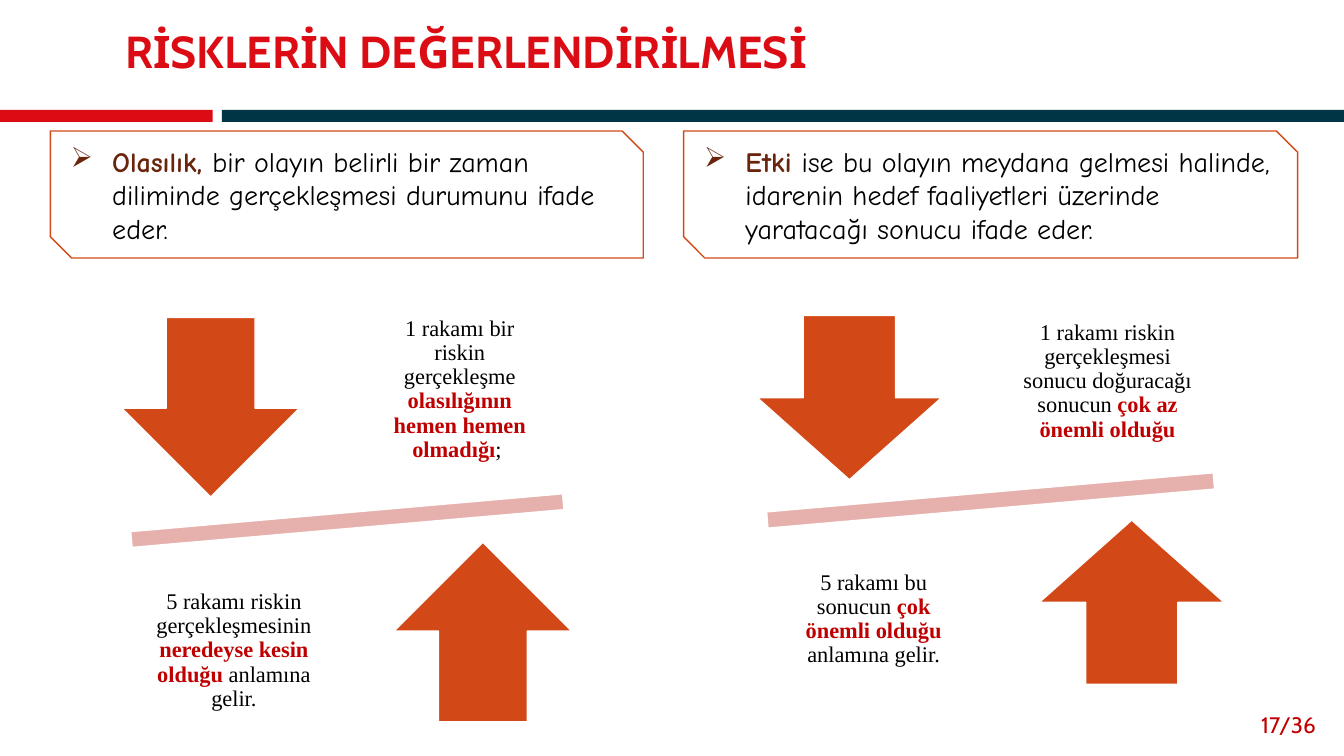
from dataclasses import dataclass
from lxml import etree
from pptx import Presentation
from pptx.dml.color import RGBColor
from pptx.enum import shapes, text
from pptx.oxml import ns
from pptx.util import Inches, Pt


@dataclass(frozen=True)
class Theme:
    red: str = "DC0C15"
    navy: str = "003546"
    orange: str = "D34817"
    brown: str = "69240C"
    pink: str = "E6B1AC"
    accent: str = "C00000"
    black: str = "000000"
    white: str = "FFFFFF"
    sans: str = "Cabin"
    hand: str = "Comic Neue"
    serif: str = "Times New Roman"
    head: int = 32
    lead: int = 20
    body: int = 16


T = Theme()
SHAPE = shapes.MSO_SHAPE
ALIGN = text.PP_ALIGN

TITLE = "RİSKLERİN DEĞERLENDİRİLMESİ"
PAGE = "17/36"
BANDS = [((0, 1.09, 2.11, 0.12), T.red), ((2.2, 1.09, 11.13, 0.12), T.navy)]
PANELS = [
    {
        "card": (0.5, 1.3, 5.88, 1.26),
        "lead": [("Olasılık, ", True),
                 ("bir olayın belirli bir zaman diliminde gerçekleşmesi "
                  "durumunu ifade eder.", False)],
        "bar": (0.52, 4.83, 5.85, 0.67),
        "arrow": (1.76, 1.78), "down": (1.21, 3.15), "up": (3.91, 5.38),
        "note": (1.88, 1.87), "top": (3.62, 2.93), "base": (1.38, 5.52),
        "low": [("1 rakamı bir riskin gerçekleşme ", False),
                ("olasılığının hemen hemen olmadığı", True), ("; ", False)],
        "high": [("5 rakamı riskin gerçekleşmesinin ", False),
                 ("neredeyse kesin olduğu", True),
                 (" anlamına gelir.", False)],
    },
    {
        "card": (6.78, 1.3, 6.09, 1.26),
        "lead": [("Etki ", True),
                 ("ise bu olayın meydana gelmesi halinde, idarenin hedef "
                  "faaliyetleri üzerinde yaratacağı sonucu ifade eder.", False)],
        "bar": (6.8, 4.62, 6.05, 0.69),
        "arrow": (1.83, 1.63), "down": (7.51, 3.13), "up": (10.31, 5.16),
        "note": (1.95, 1.71), "top": (10.01, 2.93), "base": (7.69, 5.29),
        "low": [("1 rakamı riskin gerçekleşmesi sonucu doğuracağı sonucun ", False),
                ("çok az önemli olduğu", True)],
        "high": [("5 rakamı bu sonucun ", False),
                 ("çok önemli olduğu ", True), ("anlamına gelir.", False)],
    },
]


def inch(box):
    return [Inches(v) for v in box]


def style(font, face, size, color, bold=False):
    font.name, font.size, font.bold = face, Pt(size), bold
    font.color.rgb = RGBColor.from_string(color)


def draw(home, kind, box, fill, line=None):
    shape = home.add_shape(kind, *inch(box))
    shape.shadow.inherit = False
    shape.fill.solid()
    shape.fill.fore_color.rgb = RGBColor.from_string(fill)
    if line:
        shape.line.color.rgb = RGBColor.from_string(line)
        shape.line.width = Pt(1)
    else:
        shape.line.fill.background()
    return shape


def frame(shape, inset=None):
    body = shape.text_frame
    body.word_wrap = True
    body.auto_size = text.MSO_AUTO_SIZE.NONE
    body.vertical_anchor = text.MSO_ANCHOR.MIDDLE
    if inset:
        body.margin_left = body.margin_right = Inches(inset)
        body.margin_top = body.margin_bottom = Inches(inset)
    return body.paragraphs[0]


def write(para, runs, face, size, strong):
    for words, bold in runs:
        run = para.add_run()
        run.text = words
        style(run.font, face, size, strong if bold else T.black, bold)


def bullet(para, mark, indent):
    props = para._p.get_or_add_pPr()
    props.set("marL", str(Inches(indent)))
    props.set("indent", str(-Inches(indent)))
    etree.SubElement(props, ns.qn("a:buChar")).set("char", mark)


def card(home, panel):
    box = draw(home, SHAPE.SNIP_2_DIAG_RECTANGLE, panel["card"], T.white, T.orange)
    para = frame(box)
    para.alignment = ALIGN.LEFT
    bullet(para, "➢", 0.41)
    write(para, panel["lead"], T.hand, T.lead, T.brown)


def note(home, box, runs):
    para = frame(home.add_textbox(*inch(box)), 0.12)
    para.alignment = ALIGN.CENTER
    para.line_spacing = 0.9
    write(para, runs, T.serif, T.body, T.accent)


def scale(home, panel):
    group = home.add_group_shape().shapes
    bar = draw(group, SHAPE.MATH_MINUS, panel["bar"], T.pink, T.white)
    bar.rotation = 355
    for kind, spot, place, words in (
        (SHAPE.DOWN_ARROW, "down", "top", "low"),
        (SHAPE.UP_ARROW, "up", "base", "high"),
    ):
        draw(group, kind, panel[spot] + panel["arrow"], T.orange, T.white)
        note(group, panel[place] + panel["note"], panel[words])


def main():
    deck = Presentation()
    deck.slide_width, deck.slide_height = Inches(13.33), Inches(7.5)
    slide = deck.slides.add_slide(deck.slide_layouts[5])
    home = slide.shapes
    for box, color in BANDS:
        draw(home, SHAPE.RECTANGLE, box, color)

    title = home.title
    title.left, title.top, title.width, title.height = inch((1.14, 0.14, 12.01, 0.8))
    title.text_frame.text = TITLE
    para = frame(title)
    para.alignment = ALIGN.LEFT
    para.line_spacing = 0.9
    style(para.runs[0].font, T.sans, T.head, T.red, True)

    for panel in PANELS:
        card(home, panel)
    for panel in PANELS:
        scale(home, panel)

    page = home.add_textbox(*inch((12.25, 6.99, 0.9, 0.4)))
    page.text_frame.text = PAGE
    para = frame(page)
    para.alignment = ALIGN.RIGHT
    style(para.runs[0].font, T.sans, T.body, T.accent)
    deck.save("out.pptx")


if __name__ == "__main__":
    main()
